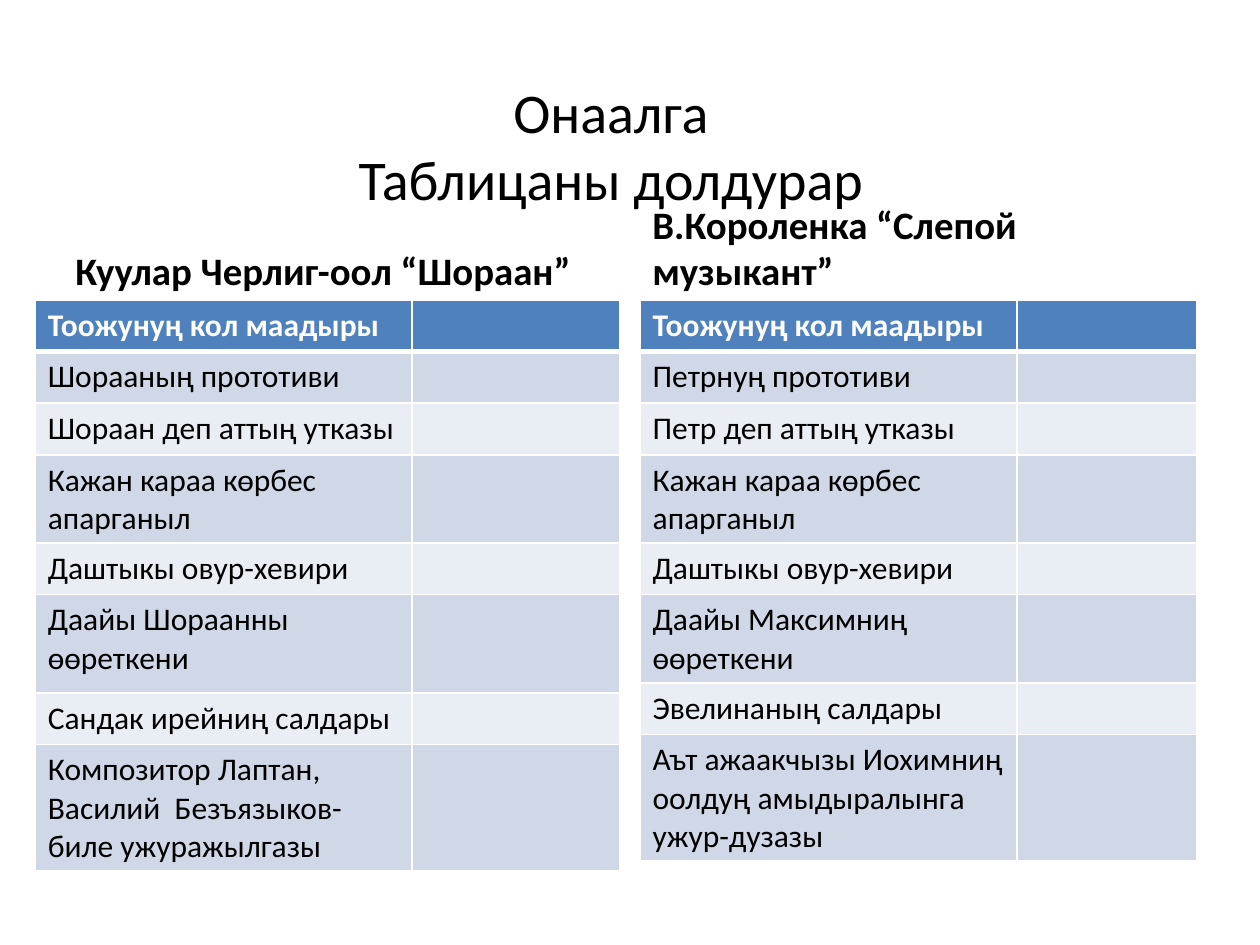
import dataclasses

import lxml.etree
import pptx
import pptx.dml.color
import pptx.enum.text
import pptx.oxml.ns
import pptx.util

Inches = pptx.util.Inches
Pt = pptx.util.Pt
Anchor = pptx.enum.text.MSO_ANCHOR
Align = pptx.enum.text.PP_ALIGN


@dataclasses.dataclass(frozen=True)
class Theme:
    font: str = "Calibri"
    ink: str = "000000"
    paper: str = "FFFFFF"
    header: str = "4F81BD"
    bands: tuple = ("D0D8E8", "E9EDF4")
    title_size: float = 32
    heading_size: float = 22.2
    cell_size: float = 18
    rule: float = 1
    header_rule: float = 3


@dataclasses.dataclass(frozen=True)
class Box:
    left: float
    top: float
    width: float
    height: float

    def lengths(self):
        return [Inches(side) for side in dataclasses.astuple(self)]


THEME = Theme()
HEADING_HEIGHT = 0.7
HEADING_WIDTH = 4.42
QUESTION_WIDTH = 2.99
ROW_HEIGHT = 0.41

TITLE = "Онаалга\vТаблицаны долдурар"
SHORAAN = (
    "Куулар Черлиг-оол “Шораан”",
    [
        "Тоожунуң кол маадыры",
        "Шорааның прототиви",
        "Шораан деп аттың утказы",
        "Кажан караа көрбес апарганыл",
        "Даштыкы овур-хевири",
        "Даайы Шораанны өөреткени",
        "Сандак ирейниң салдары",
        "Композитор Лаптан, Василий  Безъязыков-биле ужуражылгазы",
    ],
)
MUSICIAN = (
    "В.Короленка “Слепой музыкант”",
    [
        "Тоожунуң кол маадыры",
        "Петрнуң прототиви",
        "Петр деп аттың утказы",
        "Кажан караа көрбес апарганыл",
        "Даштыкы овур-хевири",
        "Даайы Максимниң өөреткени",
        "Эвелинаның салдары",
        "Аът ажаакчызы Иохимниң оолдуң амыдыралынга ужур-дузазы",
    ],
)


def apply_format(target, values):
    for name, value in values.items():
        setattr(target, name, value)


def style_font(font, size, color, bold=False):
    apply_format(font, {"name": THEME.font, "size": Pt(size), "bold": bold})
    font.color.rgb = pptx.dml.color.RGBColor.from_string(color)


def add_text(slide, box, text, size, bold, anchor, align):
    frame = slide.shapes.add_textbox(*box.lengths()).text_frame
    apply_format(frame, {"word_wrap": True, "vertical_anchor": anchor, "text": text})
    paragraph = frame.paragraphs[0]
    paragraph.alignment = align
    for run in paragraph.runs:
        style_font(run.font, size, THEME.ink, bold)


def add_borders(cell, bottom):
    """Rule all four sides; bottom is the width of the lower rule in points."""
    properties = cell._tc.get_or_add_tcPr()
    widths = {"a:lnL": THEME.rule, "a:lnR": THEME.rule, "a:lnT": THEME.rule, "a:lnB": bottom}
    for side, width in widths.items():
        line = lxml.etree.SubElement(properties, pptx.oxml.ns.qn(side), w=str(Pt(width)))
        fill = lxml.etree.SubElement(line, pptx.oxml.ns.qn("a:solidFill"))
        lxml.etree.SubElement(fill, pptx.oxml.ns.qn("a:srgbClr"), val=THEME.paper)


def style_cell(cell, is_header, fill, bottom):
    add_borders(cell, bottom)
    cell.fill.solid()
    cell.fill.fore_color.rgb = pptx.dml.color.RGBColor.from_string(fill)
    color = THEME.paper if is_header else THEME.ink
    style_font(cell.text_frame.paragraphs[0].font, THEME.cell_size, color, is_header)


def add_questions(slide, box, questions, row_heights):
    """Questions on the left, an empty answer column on the right."""
    table = slide.shapes.add_table(len(questions), 2, *box.lengths()).table
    for column, width in zip(table.columns, (QUESTION_WIDTH, box.width - QUESTION_WIDTH)):
        column.width = Inches(width)
    for index, question in enumerate(questions):
        is_header = index == 0
        fill = THEME.header if is_header else THEME.bands[(index - 1) % 2]
        bottom = THEME.header_rule if is_header else THEME.rule
        table.rows[index].height = Inches(row_heights.get(index, ROW_HEIGHT))
        table.cell(index, 0).text = question
        for cell in table.rows[index].cells:
            style_cell(cell, is_header, fill, bottom)


def add_book(slide, box, book, heading_left, row_heights):
    """Book heading above its table; heading_left is the inset from the box."""
    heading, questions = book
    heading_box = Box(box.left + heading_left, box.top, HEADING_WIDTH, HEADING_HEIGHT)
    add_text(slide, heading_box, heading, THEME.heading_size, True, Anchor.BOTTOM, Align.LEFT)
    table_box = Box(box.left, box.top + HEADING_HEIGHT, box.width, box.height - HEADING_HEIGHT)
    add_questions(slide, table_box, questions, row_heights)


def main():
    presentation = pptx.Presentation()
    apply_format(presentation, {"slide_width": Inches(10), "slide_height": Inches(7.5)})
    slide = presentation.slides.add_slide(presentation.slide_layouts[6])
    title_box = Box(0.35, 0.52, 9, 1.25)
    add_text(slide, title_box, TITLE, THEME.title_size, False, Anchor.MIDDLE, Align.CENTER)
    add_book(slide, Box(0.28, 1.68, 4.64, 5.21), SHORAAN, 0.22, {5: 0.78})
    add_book(slide, Box(5.08, 1.68, 4.42, 5.13), MUSICIAN, 0, {})
    presentation.save("out.pptx")


if __name__ == "__main__":
    main()
